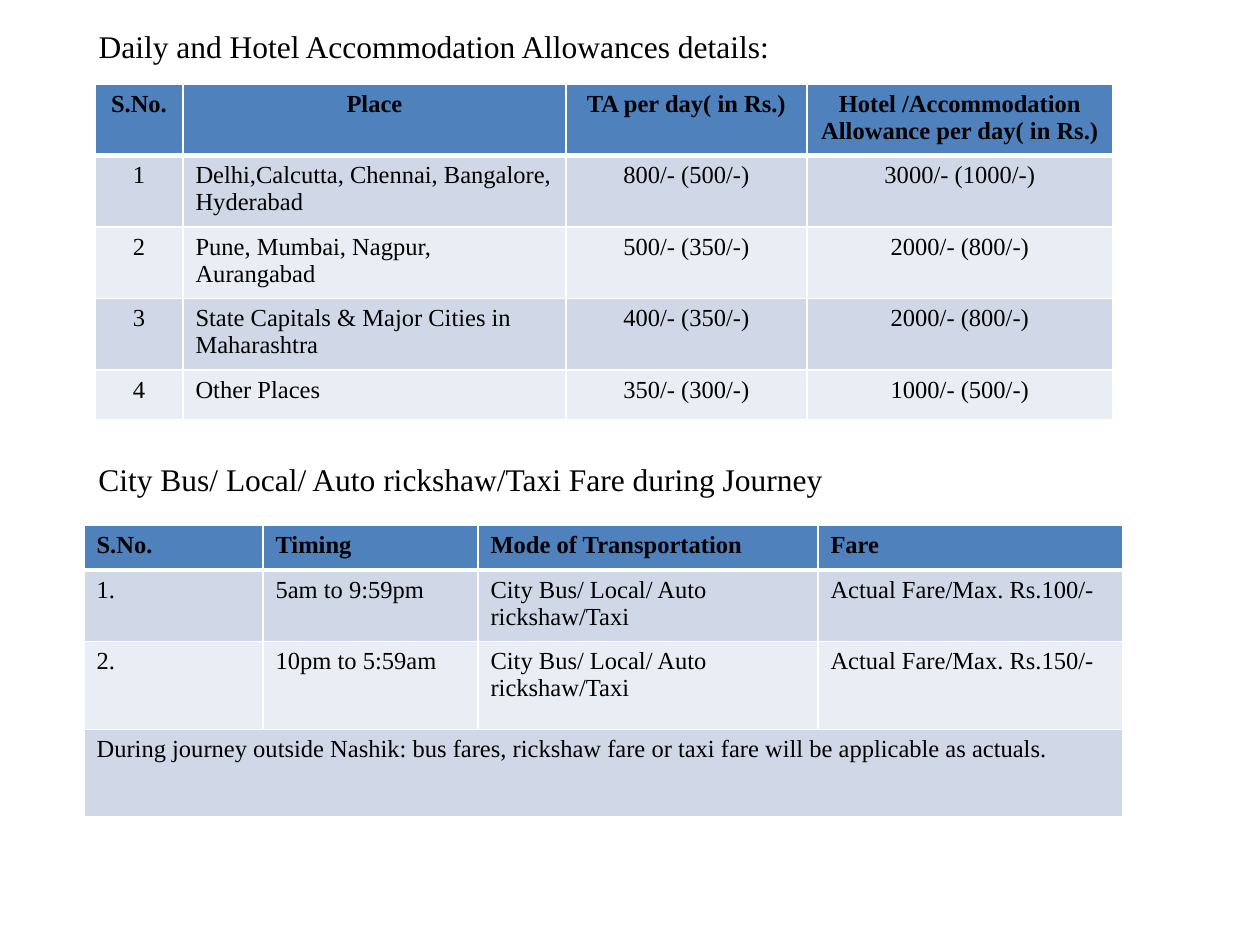
from lxml import etree
from pptx import Presentation
from pptx.dml.color import RGBColor
from pptx.enum.text import MSO_ANCHOR, MSO_AUTO_SIZE, PP_ALIGN
from pptx.oxml.ns import qn
from pptx.util import Pt

PX = 914400 / 126
LEFT, CENTER = PP_ALIGN.LEFT, PP_ALIGN.CENTER
TOP = MSO_ANCHOR.TOP
GROW = MSO_AUTO_SIZE.SHAPE_TO_FIT_TEXT

BLACK = RGBColor(0x00, 0x00, 0x00)
WHITE = RGBColor(0xFF, 0xFF, 0xFF)
HEADER_BLUE = RGBColor(0x4F, 0x81, 0xBD)
BANDS = (RGBColor(0xE9, 0xED, 0xF4), RGBColor(0xD0, 0xD8, 0xE8))

HEADING_FONT = {"name": "Times New Roman", "size": Pt(18), "bold": False}
HEADER_FONT = {"name": "Times New Roman", "size": Pt(14), "bold": True}
BODY_FONT = {**HEADER_FONT, "bold": False}
HEADING_FRAME = {"word_wrap": True, "auto_size": GROW, "vertical_anchor": TOP}

ALLOWANCES = [
    ("S.No.", "Place", "TA per day( in Rs.)", "Hotel /Accommodation Allowance per day( in Rs.)"),
    ("1", "Delhi,Calcutta, Chennai, Bangalore, Hyderabad", "800/- (500/-)", "3000/- (1000/-)"),
    ("2", "Pune, Mumbai, Nagpur, Aurangabad", "500/- (350/-)", "2000/- (800/-)"),
    ("3", "State Capitals & Major Cities in Maharashtra", "400/- (350/-)", "2000/- (800/-)"),
    ("4", "Other Places", "350/- (300/-)", "1000/- (500/-)"),
]
TRANSPORT = "City Bus/ Local/ Auto rickshaw/Taxi"
FARES = [
    ("S.No.", "Timing", "Mode of Transportation", "Fare"),
    ("1.", "5am to 9:59pm", TRANSPORT, "Actual Fare/Max. Rs.100/-"),
    ("2.", "10pm to 5:59am", TRANSPORT, "Actual Fare/Max. Rs.150/-"),
    ("During journey outside Nashik: bus fares, rickshaw fare or taxi fare "
     "will be applicable as actuals.",),
]


def px(length):
    return round(length * PX)


def set_all(target, values):
    for name, value in values.items():
        setattr(target, name, value)


def write(frame, text, font, align):
    paragraph = frame.paragraphs[0]
    paragraph.alignment = align
    run = paragraph.add_run()
    run.text = text
    set_all(run.font, font)
    run.font.color.rgb = BLACK


def format_heading(heading, text, top):
    box = {"left": 86, "top": top, "width": 1008, "height": 50}
    set_all(heading, {side: px(length) for side, length in box.items()})
    set_all(heading.text_frame, HEADING_FRAME)
    write(heading.text_frame, text, HEADING_FONT, LEFT)


def add_borders(cell, row):
    widths = {"L": 1, "R": 1, "T": 3 if row == 1 else 1, "B": 3 if row == 0 else 1}
    properties = cell._tc.get_or_add_tcPr()
    for side, width in widths.items():
        line = etree.SubElement(properties, qn(f"a:ln{side}"), w=str(Pt(width)))
        fill = etree.SubElement(line, qn("a:solidFill"))
        etree.SubElement(fill, qn("a:srgbClr"), val=str(WHITE))


def add_grid(slide, content, left, top, height, widths, heights, header_align, body_align):
    frame = slide.shapes.add_table(
        len(heights), len(widths), px(left), px(top), px(sum(widths)), px(height))
    table = frame.table
    for column, width in zip(table.columns, widths):
        column.width = px(width)
    for row, row_height in zip(table.rows, heights):
        row.height = px(row_height)
    frame.height = px(height)

    for r, texts in enumerate(content):
        for c in range(len(widths)):
            cell = table.cell(r, c)
            add_borders(cell, r)
            cell.fill.solid()
            cell.fill.fore_color.rgb = BANDS[r % 2] if r else HEADER_BLUE
        if len(texts) == 1:
            table.cell(r, 0).merge(table.cell(r, len(widths) - 1))
        aligns = body_align if r else header_align
        for c, text in enumerate(texts):
            font = BODY_FONT if r else HEADER_FONT
            write(table.cell(r, c).text_frame, text, font, aligns[c])


def main():
    deck = Presentation()
    deck.slide_width, deck.slide_height = px(1260), px(945)
    slide = deck.slides.add_slide(deck.slide_layouts[5])

    format_heading(slide.shapes.title,
                   "Daily and Hotel Accommodation Allowances details:", 21)
    add_grid(slide, ALLOWANCES, 95, 84, 336, (88, 383, 241, 306), (52, 52, 52, 48, 50),
             [CENTER] * 4, [CENTER, LEFT, CENTER, CENTER])

    fare_heading = slide.shapes.add_textbox(0, 0, 0, 0)
    format_heading(fare_heading,
                   "City Bus/ Local/ Auto rickshaw/Taxi Fare during Journey", 454)
    add_grid(slide, FARES, 84, 525, 305, (179, 215, 340, 305), (45, 63, 88, 87),
             [LEFT] * 4, [LEFT] * 4)

    deck.save("out.pptx")


if __name__ == "__main__":
    main()
